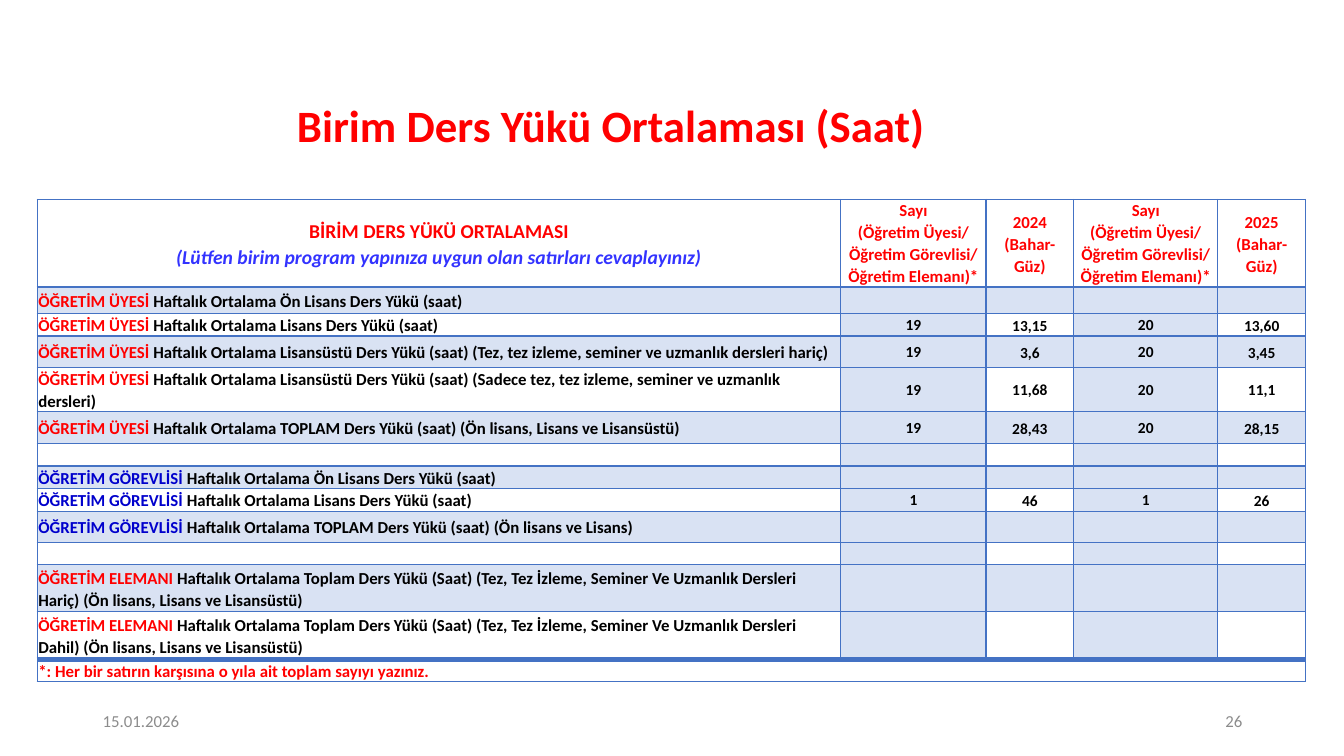
from lxml import etree
from pptx import Presentation
from pptx.dml.color import RGBColor
from pptx.enum.text import MSO_ANCHOR, PP_ALIGN
from pptx.oxml.ns import qn
from pptx.util import Inches, Pt

LEFT, CENTER, RIGHT = PP_ALIGN.LEFT, PP_ALIGN.CENTER, PP_ALIGN.RIGHT
MIDDLE = MSO_ANCHOR.MIDDLE

RED = RGBColor(0xFF, 0x00, 0x00)
BLACK = RGBColor(0x00, 0x00, 0x00)
NAVY = RGBColor(0x00, 0x00, 0xCC)
VIOLET = RGBColor(0x33, 0x33, 0xFF)
GRAY = RGBColor(0x8C, 0x8C, 0x8C)
ACCENT = RGBColor(0x44, 0x72, 0xC4)

FONT = "Calibri"
TITLE_ONLY = 5
COLUMN_WIDTHS = [7.97, 1.44, 0.87, 1.43, 0.87]
ROW_HEIGHTS = [0.87, 0.26, 0.22, 0.31, 0.44, 0.32, 0.22,
               0.22, 0.22, 0.31, 0.22, 0.47, 0.47, 0.2]
EDGE_WEIGHTS = {1: 2, 13: 4}  # horizontal edges heavier than 1 pt
COUNT_COLUMNS = (1, 3)

MEMBER = ("ÖĞRETİM ÜYESİ ", RED)
LECTURER = ("ÖĞRETİM GÖREVLİSİ ", NAVY)
STAFF = ("ÖĞRETİM ELEMANI ", RED)
LOAD = "Haftalık Ortalama "
BLANK = (None, "", [])
COUNT_HEADING = ["Sayı", "(Öğretim Üyesi/ Öğretim Görevlisi/ Öğretim Elemanı)*"]

LOAD_ROWS = [
    (MEMBER, "Ön Lisans Ders Yükü (saat)", []),
    (MEMBER, "Lisans Ders Yükü (saat)", ["19", "13,15", "20", "13,60"]),
    (MEMBER, "Lisansüstü Ders Yükü (saat) (Tez, tez izleme, seminer ve "
             "uzmanlık dersleri hariç)", ["19", "3,6", "20", "3,45"]),
    (MEMBER, "Lisansüstü Ders Yükü (saat) (Sadece tez, tez izleme, seminer ve "
             "uzmanlık dersleri)", ["19", "11,68", "20", "11,1"]),
    (MEMBER, "TOPLAM Ders Yükü (saat) (Ön lisans, Lisans ve Lisansüstü)",
     ["19", "28,43", "20", "28,15"]),
    BLANK,
    (LECTURER, "Ön Lisans Ders Yükü (saat)", []),
    (LECTURER, "Lisans Ders Yükü (saat)", ["1", "46", "1", "26"]),
    (LECTURER, "TOPLAM Ders Yükü (saat) (Ön lisans ve Lisans)", []),
    BLANK,
    (STAFF, "Toplam Ders Yükü (Saat) (Tez, Tez İzleme, Seminer Ve Uzmanlık "
            "Dersleri Hariç) (Ön lisans, Lisans ve Lisansüstü)", []),
    (STAFF, "Toplam Ders Yükü (Saat) (Tez, Tez İzleme, Seminer Ve Uzmanlık "
            "Dersleri Dahil) (Ön lisans, Lisans ve Lisansüstü)", []),
]


def add_run(paragraph, text, size, color, bold=True, italic=False):
    run = paragraph.add_run()
    run.text = text
    run.font.name = FONT
    run.font.size = Pt(size)
    run.font.bold = bold
    run.font.italic = italic
    run.font.color.rgb = color


def add_title(slide, text):
    title = slide.shapes.title
    title.left, title.top = Inches(0.32), Inches(0.92)
    title.width, title.height = Inches(11.48), Inches(0.69)
    title.text_frame.vertical_anchor = MIDDLE
    paragraph = title.text_frame.paragraphs[0]
    paragraph.alignment = CENTER
    paragraph.line_spacing = 0.9
    add_run(paragraph, text, 32, RED)


def add_footer(slide, text, left, alignment):
    footer = slide.shapes.add_textbox(Inches(left), Inches(6.95), Inches(3), Inches(0.4))
    footer.text_frame.word_wrap = True
    footer.text_frame.vertical_anchor = MIDDLE
    paragraph = footer.text_frame.paragraphs[0]
    paragraph.alignment = alignment
    add_run(paragraph, text, 12, GRAY, bold=False)


def set_borders(cell, row):
    properties = cell._tc.get_or_add_tcPr()
    weights = {"a:lnL": 1, "a:lnR": 1,
               "a:lnT": EDGE_WEIGHTS.get(row, 1),
               "a:lnB": EDGE_WEIGHTS.get(row + 1, 1)}
    for side, weight in weights.items():
        line = etree.SubElement(properties, qn(side), w=str(Pt(weight)))
        solid = etree.SubElement(line, qn("a:solidFill"))
        etree.SubElement(solid, qn("a:srgbClr"), val=str(ACCENT))


def shade(cell):
    """Fill with the accent colour at 20 % opacity."""
    cell.fill.solid()
    cell.fill.fore_color.rgb = ACCENT
    color = cell._tc.tcPr.find(qn("a:solidFill")).find(qn("a:srgbClr"))
    etree.SubElement(color, qn("a:alpha"), val="20000")


def format_cell(cell, row, column):
    cell.vertical_anchor = MIDDLE
    side = 0 if column in COUNT_COLUMNS else 0.01
    cell.margin_left = cell.margin_right = cell.margin_top = Inches(side)
    cell.margin_bottom = 0
    set_borders(cell, row)
    is_load_row = 0 < row <= len(LOAD_ROWS)
    if is_load_row and (row % 2 or column in COUNT_COLUMNS):
        shade(cell)
    else:
        cell.fill.background()
    end_properties = cell.text_frame.paragraphs[0]._p.get_or_add_endParaRPr()
    end_properties.set("sz", "1100")


def write_cell(cell, lines, alignment=CENTER):
    """Write paragraphs, each a list of add_run argument tuples."""
    frame = cell.text_frame
    for index, runs in enumerate(lines):
        paragraph = frame.add_paragraph() if index else frame.paragraphs[0]
        paragraph.alignment = alignment
        paragraph.line_spacing = 1.07
        for run in runs:
            add_run(paragraph, *run)


def fill_header(table):
    write_cell(table.cell(0, 0), [
        [("BİRİM DERS YÜKÜ ORTALAMASI", 14, RED)],
        [("(Lütfen birim program yapınıza uygun olan satırları cevaplayınız)",
          14, VIOLET, True, True)],
    ])
    headings = [COUNT_HEADING, ["2024 (Bahar- Güz)"], COUNT_HEADING, ["2025 (Bahar- Güz)"]]
    for column, heading in enumerate(headings, 1):
        write_cell(table.cell(0, column), [[(line, 12, RED)] for line in heading])


def fill_load_rows(table):
    for row, (role, description, values) in enumerate(LOAD_ROWS, 1):
        if role:
            name, color = role
            label = [(name, 12, color), (LOAD + description, 12, BLACK)]
            write_cell(table.cell(row, 0), [label], LEFT)
        for column, value in enumerate(values, 1):
            write_cell(table.cell(row, column), [[(value, 11, BLACK)]])


def add_load_table(slide):
    table = slide.shapes.add_table(
        len(ROW_HEIGHTS), len(COLUMN_WIDTHS), Inches(0.37), Inches(1.98),
        Inches(sum(COLUMN_WIDTHS)), Inches(sum(ROW_HEIGHTS))).table
    table.first_row = table.horz_banding = False
    for column, width in zip(table.columns, COLUMN_WIDTHS):
        column.width = Inches(width)
    for row, height in zip(table.rows, ROW_HEIGHTS):
        row.height = Inches(height)
    for row in range(len(ROW_HEIGHTS)):
        for column in range(len(COLUMN_WIDTHS)):
            format_cell(table.cell(row, column), row, column)
    fill_header(table)
    fill_load_rows(table)
    last_row = len(ROW_HEIGHTS) - 1
    footnote = table.cell(last_row, 0)
    footnote.merge(table.cell(last_row, len(COLUMN_WIDTHS) - 1))
    write_cell(footnote, [[
        ("*: Her bir satırın karşısına o yıla ait toplam sayıyı yazınız.", 12, RED)]], LEFT)


def main():
    presentation = Presentation()
    presentation.slide_width = Inches(13.33)
    presentation.slide_height = Inches(7.5)
    slide = presentation.slides.add_slide(presentation.slide_layouts[TITLE_ONLY])
    add_title(slide, "Birim Ders Yükü Ortalaması (Saat)")
    add_footer(slide, "15.01.2026", 0.92, LEFT)
    add_footer(slide, "26", 9.42, RIGHT)
    add_load_table(slide)
    presentation.save("out.pptx")


if __name__ == "__main__":
    main()
